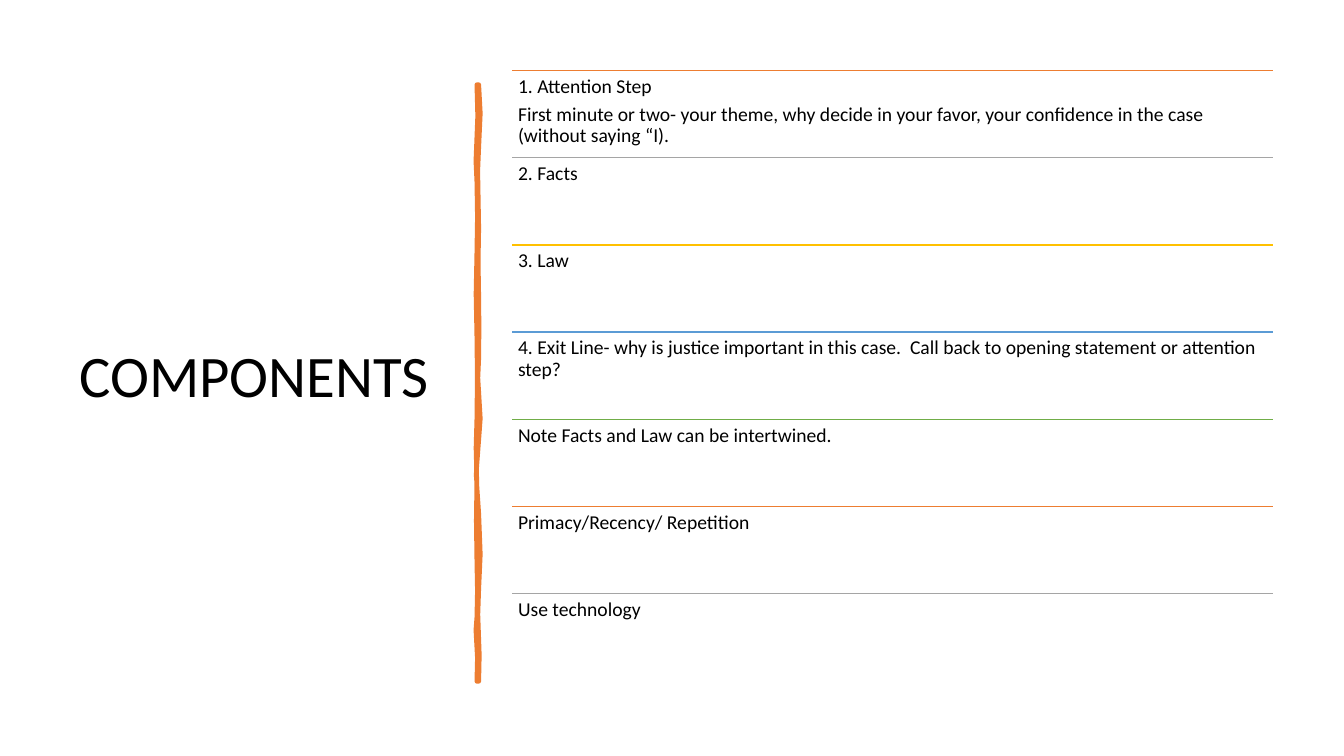
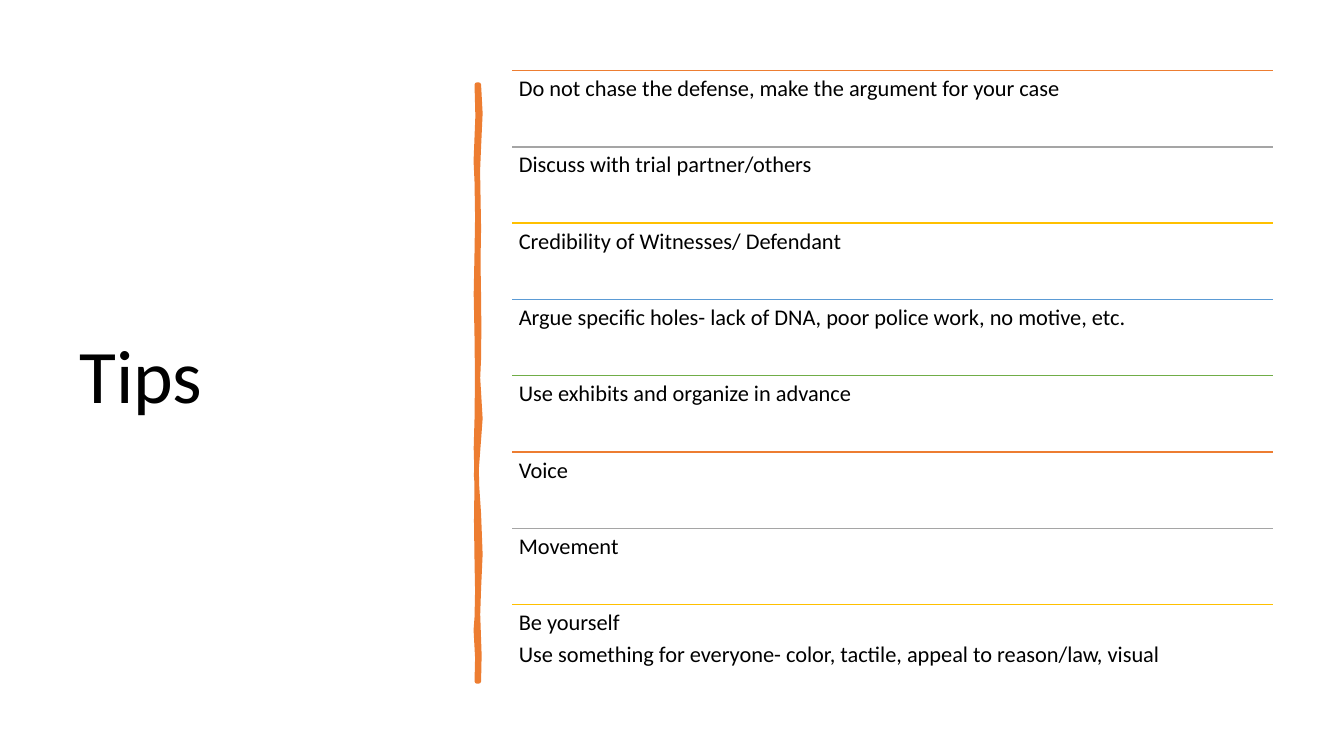
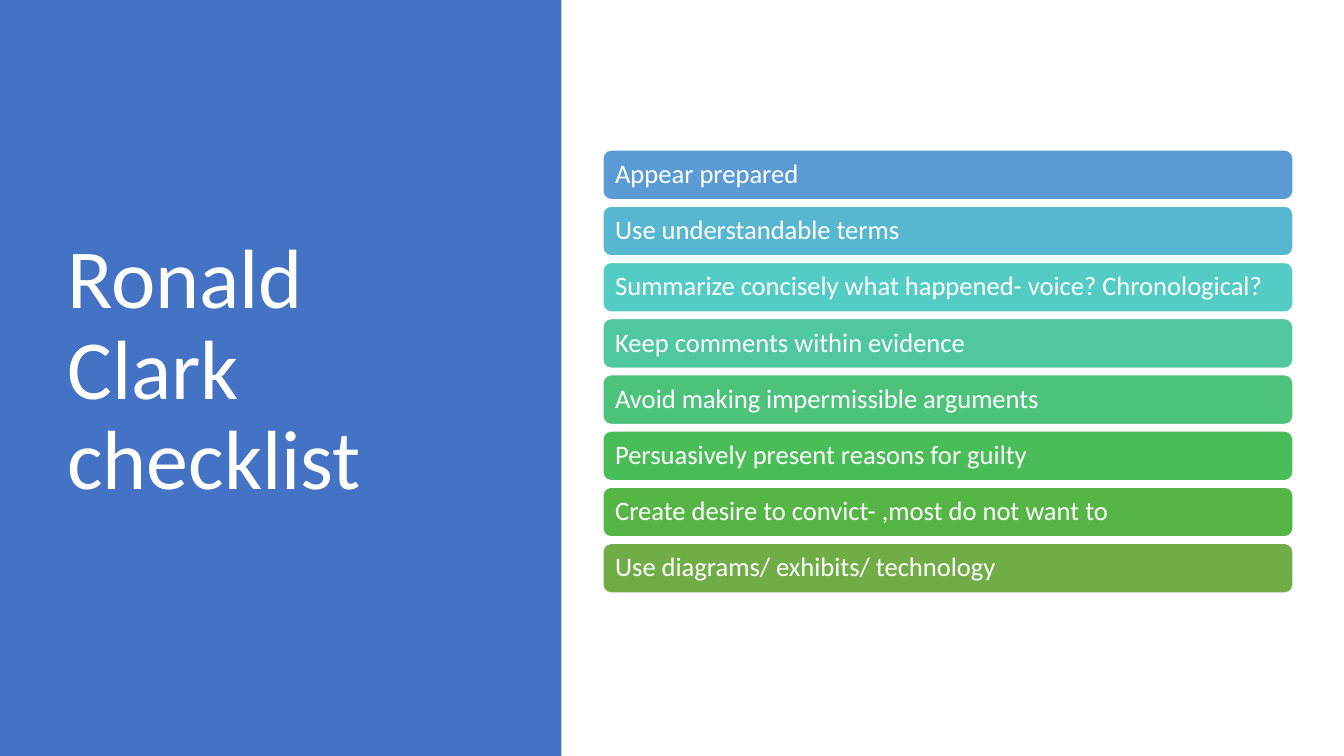
import pptx
import pptx.dml.color
import pptx.enum.shapes
import pptx.enum.text
import pptx.oxml
import pptx.oxml.ns
import pptx.util

Pt = pptx.util.Pt
ANCHOR = pptx.enum.text.MSO_ANCHOR
SHAPE = pptx.enum.shapes.MSO_SHAPE

COLORS = {
    "black": "000000", "white": "FFFFFF", "panel": "4472C4",
    "orange": "ED7D31", "gray": "A5A5A5", "gold": "FFC000",
    "blue": "5B9BD5", "green": "70AD47",
    "sky": "57B7D1", "turquoise": "53CCC5", "teal": "4FC7A0",
    "mint": "4CC27B", "emerald": "48BD58", "leaf": "55B646",
}
FONT = "Calibri"
RULE_COLORS = ["orange", "gray", "gold", "blue", "green"]
CARD_COLORS = ["blue", "sky", "turquoise", "teal", "mint", "emerald", "leaf", "green"]

# Boxes are left, top, width, height in points
TITLE_BOX = (49.7, 50.4, 269.3, 440)
BRUSH_BOX = (340, 60.5, 3, 426.2)
ROWS_BOX = (365.8, 50.4, 543.6, 436)
PANEL_BOX = (0, 0, 401, 540)
PANEL_TITLE_BOX = (41, 49, 299.5, 433.4)
CARDS_BOX = (430.6, 107.1, 493, 316.6)
CARD_HEIGHT = 35.6

# Brush outline, clockwise from the top right, as offsets within its box
BRUSH_RIGHT = [
    (2, 0), (3.1, 20.5), (2, 44.5), (1.3, 61.5), (2, 102.5), (1.6, 126.5),
    (2, 151.5), (2.2, 173.5), (2, 195.5), (1.4, 209.5), (3.1, 238.5),
    (2, 253.5), (0.1, 278.5), (2, 306.5), (3.1, 335.5), (2, 360),
    (1.4, 378.5), (2.4, 407.5), (2, 426.2),
]
BRUSH_LEFT = [
    (0.6, 426.2), (1, 409.5), (-0.1, 389.5), (0.6, 380.5), (1, 361.5),
    (0.6, 340.5), (0.2, 311.5), (0.6, 282.5), (0, 259.5), (0.6, 238.5),
    (0.9, 209.5), (0.6, 180.5), (0, 149.5), (0.6, 119.5), (1, 94.5),
    (0.6, 69.5), (-0.1, 54.5), (1.2, 22.5), (0.6, 0),
]

COMPONENTS = [
    ["1. Attention Step",
     "First minute or two- your theme, why decide in your favor, "
     "your confidence in the case (without saying “I)."],
    ["2. Facts"],
    ["3. Law"],
    ["4. Exit Line- why is justice important in this case.  "
     "Call back to opening statement or attention step?"],
    ["Note Facts and Law can be intertwined."],
    ["Primacy/Recency/ Repetition"],
    ["Use technology"],
]
TIPS = [
    ["Do not chase the defense, make the argument for your case"],
    ["Discuss with trial partner/others"],
    ["Credibility of Witnesses/ Defendant"],
    ["Argue specific holes- lack of DNA, poor police work, no motive, etc."],
    ["Use exhibits and organize in advance"],
    ["Voice"],
    ["Movement"],
    ["Be yourself",
     "Use something for everyone- color, tactile, appeal to reason/law, visual"],
]
CHECKLIST = [
    "Appear prepared",
    "Use understandable terms",
    "Summarize concisely what happened- voice? Chronological?",
    "Keep comments within evidence",
    "Avoid making impermissible arguments",
    "Persuasively present reasons for guilty",
    "Create desire to convict- ,most do not want to",
    "Use diagrams/ exhibits/ technology",
]


def rgb(name):
    return pptx.dml.color.RGBColor.from_string(COLORS[name])


def points(box):
    return [Pt(length) for length in box]


def write(shape, lines, size, color, anchor, margins):
    """Fill a shape with left-aligned paragraphs; margins are (horizontal, vertical)."""
    frame = shape.text_frame
    frame.word_wrap = True
    frame.vertical_anchor = anchor
    frame.margin_left = frame.margin_right = Pt(margins[0])
    frame.margin_top = frame.margin_bottom = Pt(margins[1])
    frame.text = "\n".join(lines)
    for paragraph in frame.paragraphs:
        paragraph.alignment = pptx.enum.text.PP_ALIGN.LEFT
        paragraph.line_spacing = 0.9
        paragraph.space_after = Pt(round(0.35 * size, 1))
        paragraph.font.name = FONT
        paragraph.font.size = Pt(size)
        paragraph.font.color.rgb = rgb(color)


def paint(shape, fill, line=None, width=1):
    shape.shadow.inherit = False
    shape.fill.solid()
    shape.fill.fore_color.rgb = rgb(fill)
    if line:
        shape.line.color.rgb = rgb(line)
        shape.line.width = Pt(width)
    else:
        shape.line.fill.background()


def add_title(slide, box, title, size, color):
    write(slide.shapes.add_textbox(*points(box)), [title], size, color,
          ANCHOR.MIDDLE, (7.2, 3.6))


def add_brush_stroke(slide, box):
    left, top = box[:2]
    outline = [(Pt(left + x), Pt(top + y)) for x, y in BRUSH_RIGHT + BRUSH_LEFT]
    builder = slide.shapes.build_freeform(*outline[0], scale=1.0)
    builder.add_line_segments(outline[1:], close=True)
    paint(builder.convert_to_shape(), "orange", "orange", 3.25)


def add_rule(slide, left, top, width, color):
    rule = slide.shapes.add_connector(
        pptx.enum.shapes.MSO_CONNECTOR.STRAIGHT,
        *points((left, top, left + width, top)))
    rule.line.color.rgb = rgb(color)
    rule.line.width = Pt(1)
    rule.element.spPr.append(pptx.oxml.parse_xml(
        f"<a:effectLst {pptx.oxml.ns.nsdecls('a')}/>"))


def add_ruled_rows(slide, box, rows, size):
    left, top, width, height = box
    row_height = height / len(rows)
    inset = 0.3 * size
    for index, lines in enumerate(rows):
        row_top = top + index * row_height
        add_rule(slide, left, row_top, width, RULE_COLORS[index % len(RULE_COLORS)])
        row = slide.shapes.add_textbox(*points((left, row_top, width, row_height)))
        write(row, lines, size, "black", ANCHOR.TOP, (inset, inset))


def add_cards(slide, box, items):
    left, top, width, height = box
    pitch = (height - CARD_HEIGHT) / (len(items) - 1)
    for index, (item, color) in enumerate(zip(items, CARD_COLORS)):
        card = slide.shapes.add_shape(
            SHAPE.ROUNDED_RECTANGLE,
            *points((left, top + index * pitch, width, CARD_HEIGHT)))
        paint(card, color, "white")
        write(card, [item], 19, "white", ANCHOR.MIDDLE, (7.2, 5.4))


def add_rows_slide(slide, title, title_size, rows, row_size):
    add_title(slide, TITLE_BOX, title, title_size, "black")
    add_brush_stroke(slide, BRUSH_BOX)
    add_ruled_rows(slide, ROWS_BOX, rows, row_size)


def add_checklist_slide(slide, title, items):
    paint(slide.shapes.add_shape(SHAPE.RECTANGLE, *points(PANEL_BOX)), "panel")
    add_title(slide, PANEL_TITLE_BOX, title, 60, "white")
    add_cards(slide, CARDS_BOX, items)


def main():
    deck = pptx.Presentation()
    deck.slide_width, deck.slide_height = Pt(960), Pt(540)
    blank = deck.slide_layouts[6]
    add_rows_slide(deck.slides.add_slide(blank), "COMPONENTS", 42, COMPONENTS, 14)
    add_rows_slide(deck.slides.add_slide(blank), "Tips", 54, TIPS, 16)
    add_checklist_slide(deck.slides.add_slide(blank), "Ronald Clark checklist", CHECKLIST)
    deck.save("out.pptx")


if __name__ == "__main__":
    main()
